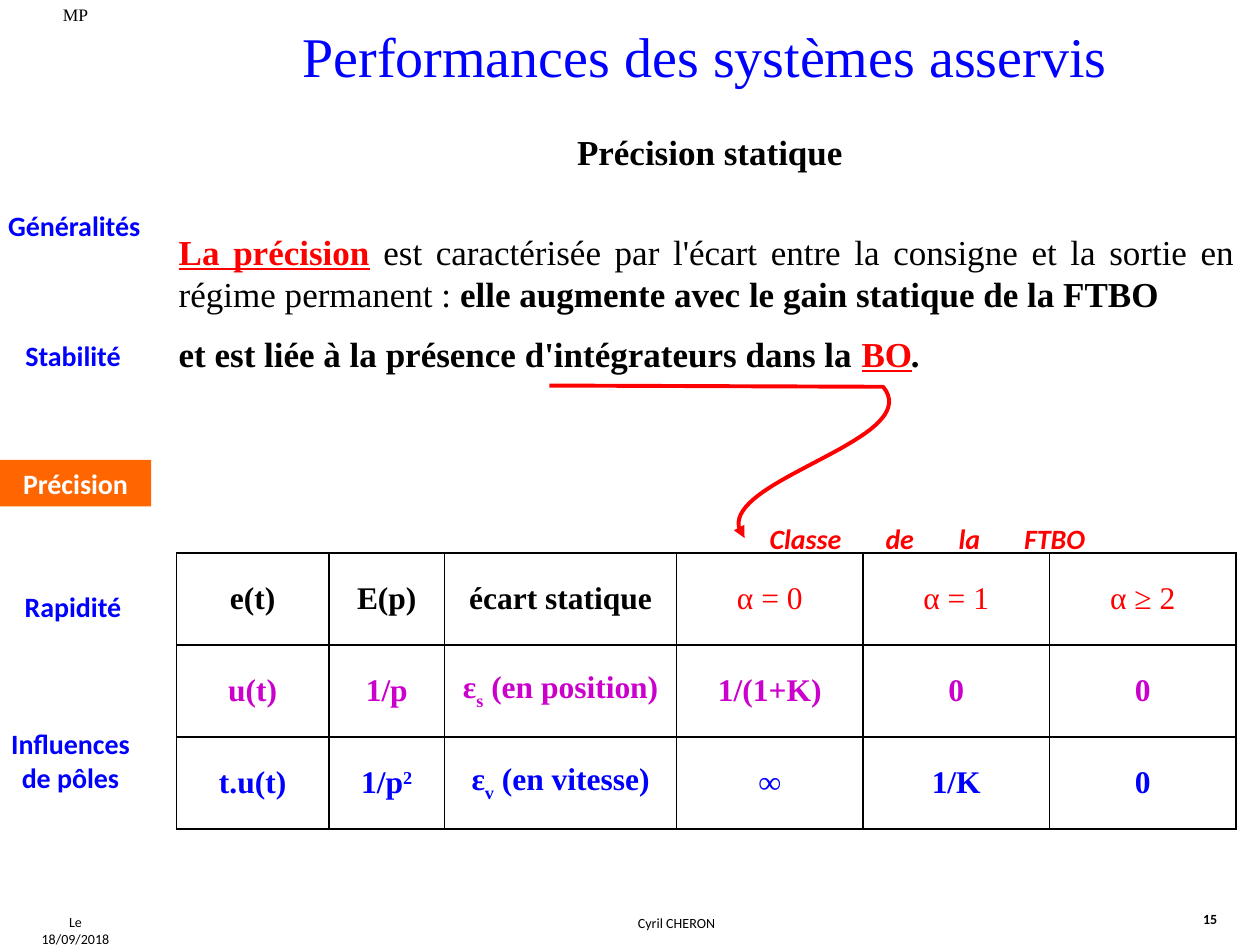
"""Build the slide on the static precision of feedback control systems."""
from lxml.etree import SubElement
from pptx import Presentation
from pptx.dml.color import RGBColor
from pptx.enum.text import MSO_ANCHOR, MSO_AUTO_SIZE, PP_ALIGN
from pptx.oxml.ns import qn
from pptx.util import Inches, Pt

BLACK, BLUE, RED, PURPLE, WHITE, ORANGE = "000000", "0000FF", "FF0000", "CC00CC", "FFFFFF", "FF6600"
SERIF, SANS = "Times New Roman", "Calibri"


def color(hex_code):
    return RGBColor.from_string(hex_code)


def write(paragraph, text, size, font, hex_code, bold=False, italic=False, underline=False,
          align=PP_ALIGN.CENTER, baseline=0):
    paragraph.alignment = align
    run = paragraph.add_run()
    run.text = text
    run.font.size, run.font.name = Pt(size), font
    run.font.bold, run.font.italic, run.font.underline = bold, italic, underline
    run.font.color.rgb = color(hex_code)
    if baseline:
        run._r.get_or_add_rPr().set("baseline", str(baseline * 1000))


presentation = Presentation()
presentation.slide_width, presentation.slide_height = Inches(10), Inches(7.5)
slide = presentation.slides.add_slide(presentation.slide_layouts[5])

title = slide.shapes.title
title.left, title.top, title.width, title.height = Inches(2.17), Inches(0.12), Inches(6.85), Inches(0.64)
title.text_frame.word_wrap = False
title.text_frame.auto_size = MSO_AUTO_SIZE.NONE
title.text_frame.vertical_anchor = MSO_ANCHOR.TOP
write(title.text_frame.paragraphs[0], "Performances des systèmes asservis", 32, SERIF, BLUE)

labels = [
    ("Le 18/09/2018", 0.17, 7.2, 0.86, 0.24, 8, SANS, False, False, PP_ALIGN.CENTER),
    ("Cyril CHERON", 1.25, 7.21, 8.24, 0.24, 8, SANS, False, True, PP_ALIGN.CENTER),
    ("15", 9.45, 7.18, 0.39, 0.24, 8, SANS, True, False, PP_ALIGN.LEFT),
    ("MP", 0.17, -0.02, 0.86, 0.27, 10, SERIF, False, True, PP_ALIGN.CENTER),
    ("Précision statique", 1.38, 0.99, 8.51, 0.44, 20, SERIF, True, True, PP_ALIGN.CENTER),
]
for text, left, top, width, height, size, font, bold, wrap, align in labels:
    box = slide.shapes.add_textbox(Inches(left), Inches(top), Inches(width), Inches(height))
    box.text_frame.word_wrap = wrap
    write(box.text_frame.paragraphs[0], text, size, font, BLACK, bold, align=align)

chapters = [
    ("Généralités", 0.01, 1.61, 1.16, 0.37),
    ("Stabilité", 0, 2.64, 1.16, 0.37),
    ("Précision", 0, 3.65, 1.2, 0.37),
    ("Rapidité", 0, 4.63, 1.16, 0.37),
    ("Influences de pôles", -0.02, 5.72, 1.16, 0.64),
]
for text, left, top, width, height in chapters:
    current = text == "Précision"
    box = slide.shapes.add_textbox(Inches(left), Inches(top), Inches(width), Inches(height))
    if current:
        box.fill.solid()
        box.fill.fore_color.rgb = color(ORANGE)
    frame = box.text_frame
    frame.word_wrap = True
    frame.margin_left = frame.margin_right = Inches(0.04)
    write(frame.paragraphs[0], text, 16, SANS, WHITE if current else BLUE, True)

definition = [
    [("La précision", RED, True, False, True),
     (" est caractérisée par l'écart entre la consigne et la sortie en régime permanent : ",
      BLACK, False, False, False),
     ("elle augmente avec le gain statique de la FTBO", BLACK, True, False, False)],
    [("et est liée à la présence d'intégrateurs dans la ", BLACK, True, False, False),
     ("BO", RED, True, False, True),
     (".", BLACK, True, True, False)],
]
frame = slide.shapes.add_textbox(Inches(1.32), Inches(1.78), Inches(8.58), Inches(1.28)).text_frame
frame.word_wrap = True
for index, runs in enumerate(definition):
    paragraph = frame.add_paragraph() if index else frame.paragraphs[0]
    if index:
        paragraph.space_before = Pt(10)
    for text, hex_code, bold, italic, underline in runs:
        write(paragraph, text, 20, SERIF, hex_code, bold, italic, underline, PP_ALIGN.JUSTIFY)

rows = [
    (BLACK, [["e(t)"], ["E(p)"], ["écart statique"], ["α = 0"], ["α = 1"], ["α ≥ 2"]]),
    (PURPLE, [["u(t)"], ["1/p"], ["ε", ("s", -30), " (en position)"], ["1/(1+K)"], ["0"], ["0"]]),
    (BLUE, [["t.u(t)"], ["1/p", ("2", 30)], ["ε", ("v", -30), " (en vitesse)"], ["∞"], ["1/K"], ["0"]]),
]
table = slide.shapes.add_table(3, 6, Inches(1.4), Inches(4.39), Inches(8.39), Inches(2.19)).table
table.first_row = table.horz_banding = False
for column, width in zip(table.columns, [1.21, 0.92, 1.84, 1.48, 1.48, 1.48]):
    column.width = Inches(width)
for row_index, (row_color, cells) in enumerate(rows):
    table.rows[row_index].height = Inches(0.73)
    for column_index, runs in enumerate(cells):
        cell = table.cell(row_index, column_index)
        cell.vertical_anchor = MSO_ANCHOR.MIDDLE
        properties = cell._tc.get_or_add_tcPr()
        for side in ("a:lnL", "a:lnR", "a:lnT", "a:lnB"):
            border = SubElement(properties, qn(side), w=str(Pt(1)))
            SubElement(SubElement(border, qn("a:solidFill")), qn("a:srgbClr"), val=BLACK)
        cell.fill.background()
        is_class = row_index == 0 and column_index > 2
        for run in runs:
            text, baseline = run if isinstance(run, tuple) else (run, 0)
            write(cell.text_frame.paragraphs[0], text, 18, SERIF, RED if is_class else row_color,
                  not is_class, baseline=baseline)

curve = [(7.01, 3.07), (7.37, 3.51), (5.55, 3.84), (5.91, 4.27)]
steps = 40
points = []
for step in range(steps + 1):
    t = step / steps
    weights = [(1 - t) ** 3, 3 * t * (1 - t) ** 2, 3 * t ** 2 * (1 - t), t ** 3]
    points.append(tuple(Inches(sum(weight * point[axis] for weight, point in zip(weights, curve)))
                        for axis in (0, 1)))
builder = slide.shapes.build_freeform(Inches(4.36), Inches(3.06))
builder.add_line_segments(points, close=False)
arrow = builder.convert_to_shape()
arrow.shadow.inherit = False
arrow.fill.background()
arrow.line.color.rgb = color(RED)
arrow.line.width = Pt(2.25)
SubElement(arrow.line._get_or_add_ln(), qn("a:tailEnd"), type="triangle")

frame = slide.shapes.add_textbox(Inches(6.01), Inches(4.09), Inches(2.8), Inches(0.37)).text_frame
frame.word_wrap = True
paragraph = frame.paragraphs[0]
tabs = SubElement(paragraph._p.get_or_add_pPr(), qn("a:tabLst"))
for position in (0.92, 1.5, 2.02):
    SubElement(tabs, qn("a:tab"), pos=str(Inches(position)), algn="l")
write(paragraph, "Classe\tde\tla\tFTBO", 16, SANS, RED, True, True, align=PP_ALIGN.LEFT)

presentation.save("out.pptx")
